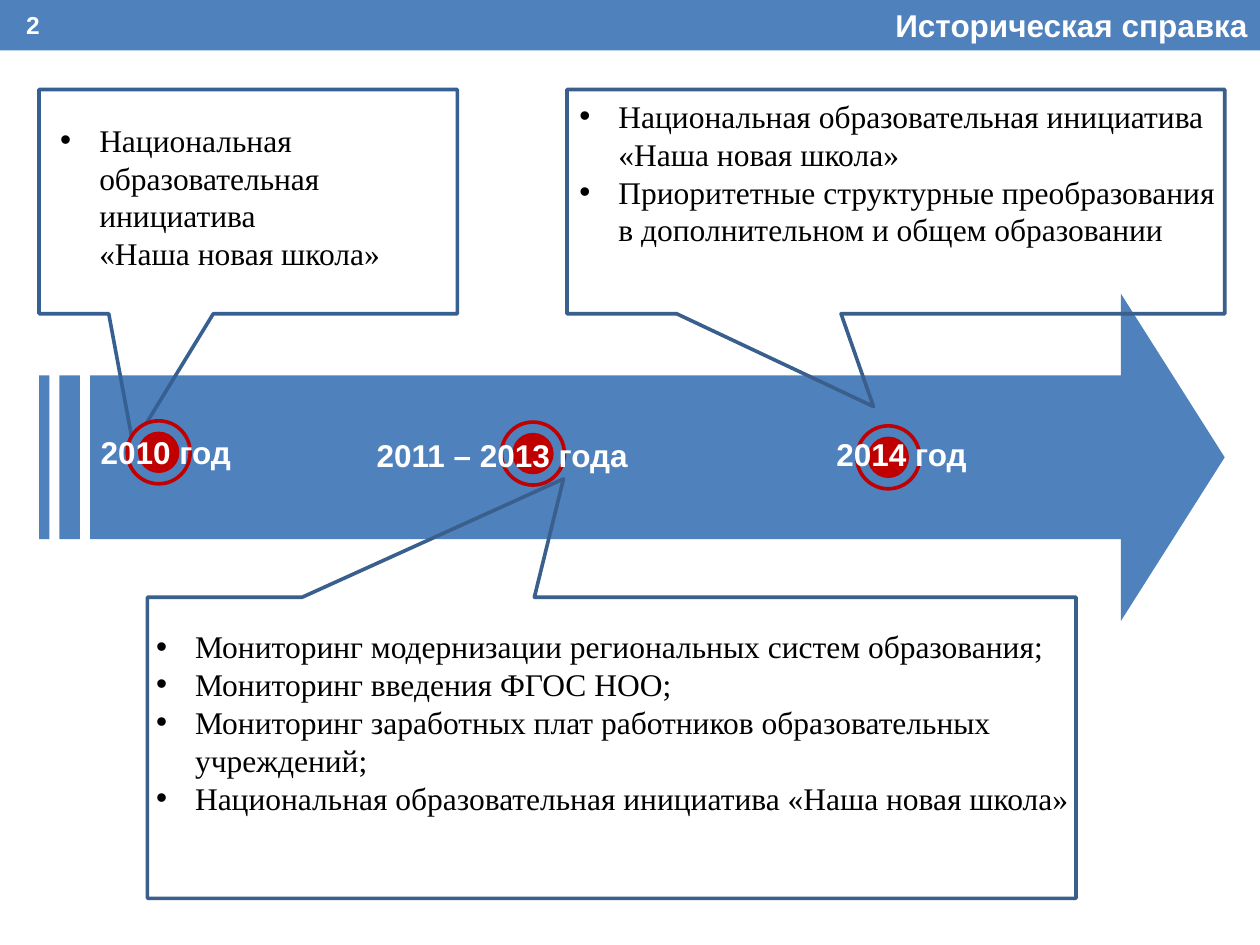
from pptx import Presentation
from pptx import util as u
from pptx.dml.color import RGBColor
from pptx.enum import shapes, text
from pptx.oxml.xmlchemy import OxmlElement

BLUE = RGBColor(0x4F, 0x81, 0xBD)
DARK_BLUE = RGBColor(0x37, 0x60, 0x92)
SLATE = RGBColor(0x3A, 0x5F, 0x8C)
RED = RGBColor(0xC0, 0x00, 0x00)
WHITE = RGBColor(0xFF, 0xFF, 0xFF)
BLACK = RGBColor(0x00, 0x00, 0x00)

SLIDE_W, SLIDE_H = 10, 7.5
BAR_H = 0.4
LINE = u.Pt(2.08)
RING, DOT = 0.5, 0.3
HANG = 0.31

TITLE = "Историческая справка"
NUMBER = "2"

# box, rotation, pointer offsets, outline
CALLOUTS = [
    ((0.31, 0.71, 3.32, 1.78), 0, (-0.275, 1.085), DARK_BLUE),
    ((1.17, 4.74, 7.37, 2.39), 180, (0.052, 0.893), SLATE),
    ((4.5, 0.71, 5.22, 1.78), 0, (-0.034, 0.914), SLATE),
]

# label, label box, centre of its marker
MILESTONES = [
    ("2010 год", (0.7, 3.39, 1.5, 0.4), (1.26, 3.59)),
    ("2011 – 2013 года", (2.89, 3.41, 2.36, 0.4), (4.23, 3.6)),
    ("2014 год", (6.54, 3.4, 1.5, 0.4), (7.05, 3.63)),
]

# box, lines as (has bullet, wording)
NOTES = [
    ((0.38, 0.91, 3.2, 1.31), [
        (True, "Национальная образовательная инициатива"),
        (False, "«Наша новая школа»"),
    ]),
    ((1.14, 4.93, 7.64, 1.92), [
        (True, "Мониторинг модернизации региональных систем образования;"),
        (True, "Мониторинг введения ФГОС НОО;"),
        (True, "Мониторинг заработных плат работников образовательных учреждений;"),
        (True, "Национальная образовательная инициатива «Наша новая школа»"),
    ]),
    ((4.5, 0.72, 5.39, 1.62), [
        (True, "Национальная образовательная инициатива"),
        (False, "«Наша новая школа»"),
        (True, "Приоритетные структурные преобразования"),
        (False, "в дополнительном и общем образовании"),
    ]),
]


def inches(box):
    return [u.Inches(side) for side in box]


def add_preset(parent, preset, box, fill=None, line=None):
    shape = parent.add_shape(preset, *inches(box))
    shape.shadow.inherit = False
    if fill is None:
        shape.fill.background()
    else:
        shape.fill.solid()
        shape.fill.fore_color.rgb = fill
    if line is None:
        shape.line.fill.background()
    else:
        shape.line.color.rgb = line
        shape.line.width = LINE
    return shape


def add_frame(parent, box, anchor=text.MSO_ANCHOR.TOP):
    frame = parent.add_textbox(*inches(box)).text_frame
    frame.word_wrap = True
    frame.vertical_anchor = anchor
    return frame


def add_run(paragraph, words, font, size, color, bold=False):
    run = paragraph.add_run()
    run.text = words
    run.font.name = font
    run.font.size = u.Pt(size)
    run.font.color.rgb = color
    run.font.bold = bold


def hang(paragraph, bulleted):
    """Indent the paragraph, with its bullet in the margin."""
    props = paragraph._p.get_or_add_pPr()
    props.set("marL", str(u.Inches(HANG)))
    props.set("indent", str(-u.Inches(HANG) if bulleted else 0))
    if bulleted:
        font = OxmlElement("a:buFont")
        font.set("typeface", "Arial")
        bullet = OxmlElement("a:buChar")
        bullet.set("char", "•")
        props.extend([font, bullet])
    else:
        props.append(OxmlElement("a:buNone"))


def add_marker(parent, centre):
    marker = parent.add_group_shape().shapes
    for size, fill in ((RING, BLUE), (DOT, RED)):
        left, top = (c - size / 2 for c in centre)
        add_preset(marker, shapes.MSO_SHAPE.OVAL, (left, top, size, size), fill, RED)


def main():
    prs = Presentation()
    prs.slide_width, prs.slide_height = inches((SLIDE_W, SLIDE_H))
    parts = prs.slides.add_slide(prs.slide_layouts[6]).shapes

    add_preset(parts, shapes.MSO_SHAPE.RECTANGLE, (0, 0, SLIDE_W, BAR_H), BLUE)
    title = add_frame(parts, (6.69, 0, 3.31, BAR_H)).paragraphs[0]
    title.alignment = text.PP_ALIGN.RIGHT
    add_run(title, TITLE, "Arial", 18, WHITE, True)

    timeline = add_preset(parts, shapes.MSO_SHAPE.STRIPED_RIGHT_ARROW,
                          (0.31, 2.33, 9.41, 2.6), BLUE)
    timeline.adjustments[0], timeline.adjustments[1] = 0.5, 0.317

    for box, rotation, pointer, outline in CALLOUTS:
        callout = add_preset(parts, shapes.MSO_SHAPE.RECTANGULAR_CALLOUT, box, line=outline)
        callout.rotation = rotation
        callout.adjustments[0], callout.adjustments[1] = pointer

    for _, _, centre in MILESTONES:
        add_marker(parts, centre)
    for label, box, _ in MILESTONES:
        add_run(add_frame(parts, box).paragraphs[0], label, "Arial", 18, WHITE, True)

    for box, lines in NOTES:
        frame = add_frame(parts, box)
        for i, (bulleted, words) in enumerate(lines):
            paragraph = frame.add_paragraph() if i else frame.paragraphs[0]
            hang(paragraph, bulleted)
            add_run(paragraph, words, "Times New Roman", 18, BLACK)

    number = add_frame(parts, (0.11, 0.02, 1.17, 0.36), text.MSO_ANCHOR.MIDDLE)
    add_run(number.paragraphs[0], NUMBER, "Arial", 14, WHITE, True)

    prs.save("out.pptx")


if __name__ == "__main__":
    main()
